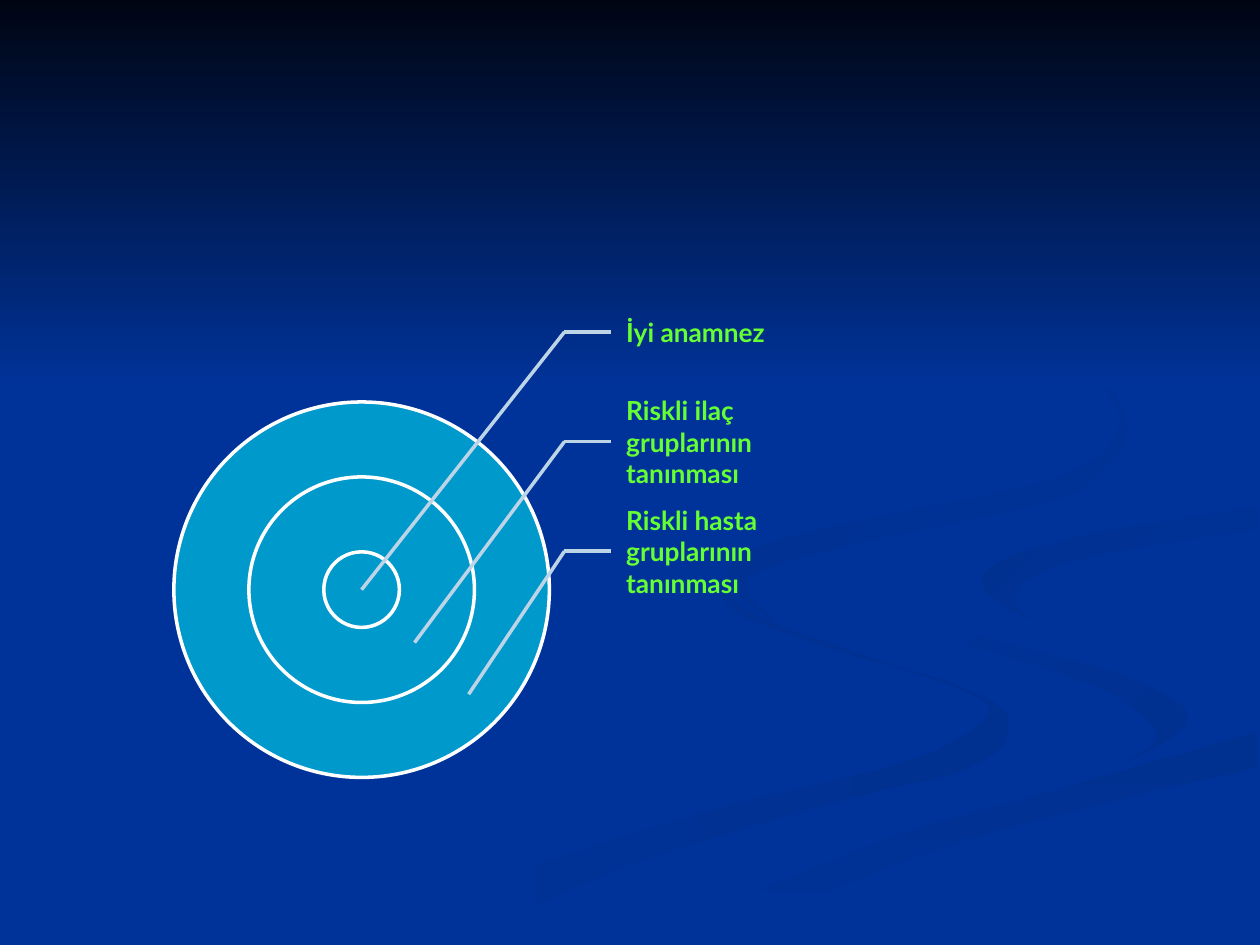
"""Build a slide with a three-ring target and its labels over a ribbon backdrop."""
from dataclasses import dataclass

from lxml import etree
from pptx import Presentation
from pptx.dml.color import RGBColor
from pptx.enum.shapes import MSO_CONNECTOR as Connector, MSO_SHAPE as Shape
from pptx.enum.text import MSO_ANCHOR as Anchor
from pptx.oxml.ns import qn
from pptx.util import Inches, Pt


@dataclass(frozen=True)
class Theme:
    background: RGBColor = RGBColor(0x00, 0x33, 0x99)
    shade: RGBColor = RGBColor(0x00, 0x30, 0x90)
    night: RGBColor = RGBColor(0x00, 0x05, 0x14)
    ring: RGBColor = RGBColor(0x00, 0x99, 0xCC)
    outline: RGBColor = RGBColor(0xFF, 0xFF, 0xFF)
    leader: RGBColor = RGBColor(0xBD, 0xD4, 0xE7)
    label: RGBColor = RGBColor(0x66, 0xFF, 0x33)
    font: str = "Lato"
    label_size: Pt = Pt(15)
    line_width: Pt = Pt(2)


def paint_gradient(shape, first, last, clockwise):
    shape.shadow.inherit = False
    shape.line.fill.background()
    shape.fill.gradient()
    shape.fill.gradient_angle = (360 - clockwise) % 360
    for stop, color, position in zip(shape.fill.gradient_stops, (first, last), (0, 1)):
        stop.color.rgb = color
        stop.position = position


def smooth_edge(points, steps=6):
    padded = [points[0], *points, points[-1]]
    curve = [points[0]]
    for a, b, c, d in zip(padded, padded[1:], padded[2:], padded[3:]):
        for step in range(1, steps + 1):
            t = step / steps
            curve.append(tuple(
                q + t * (r - p) / 2 + t**2 * (p - 2.5 * q + 2 * r - s / 2)
                + t**3 * (1.5 * (q - r) + (s - p) / 2)
                for p, q, r, s in zip(a, b, c, d)
            ))
    return curve


theme = Theme()
presentation = Presentation()
presentation.slide_width = Inches(10)
presentation.slide_height = Inches(7.5)
slide = presentation.slides.add_slide(presentation.slide_layouts[6])
slide.background.fill.solid()
slide.background.fill.fore_color.rgb = theme.background
shapes = slide.shapes

RIBBONS = [
    (theme.background, theme.shade, 0,
     [(575, 459), (581, 484), (654, 513), (752, 543), (785, 566), (727, 602),
      (579, 639), (417, 690), (300, 749)],
     [(575, 459), (594, 485), (682, 519), (781, 553), (800, 581), (769, 609),
      (651, 640), (499, 687), (361, 749)]),
    (theme.background, theme.shade, 45,
     [(724, 464), (755, 505), (868, 544), (918, 581), (894, 605)],
     [(724, 464), (758, 498), (888, 535), (943, 570), (894, 605)]),
    (theme.shade, theme.background, 90,
     [(503, 749), (696, 669), (831, 629), (998, 581)],
     [(571, 749), (695, 692), (821, 651), (998, 609)]),
    (theme.shade, theme.background, 45,
     [(998, 402), (865, 424), (791, 447), (782, 469), (826, 496)],
     [(998, 420), (878, 439), (816, 459), (806, 480), (826, 496)]),
    (theme.shade, theme.background, 45,
     [(762, 233), (846, 279), (889, 335), (842, 378), (704, 409), (605, 433),
      (577, 462), (622, 500)],
     [(762, 233), (864, 291), (894, 344), (855, 391), (683, 430), (606, 452),
      (593, 470), (622, 500)]),
]
for first, last, clockwise, near_edge, far_edge in RIBBONS:
    outline = smooth_edge(near_edge) + smooth_edge(far_edge)[::-1]
    builder = shapes.build_freeform(*outline[0], scale=Inches(0.01))
    builder.add_line_segments(outline[1:], close=True)
    paint_gradient(builder.convert_to_shape(), first, last, clockwise)

sky = shapes.add_shape(Shape.RECTANGLE, 0, 0, Inches(10), Inches(3.08))
paint_gradient(sky, theme.night, theme.background, 90)

CENTER_X, CENTER_Y = 2.87, 4.68
for diameter in (2.98, 1.79, 0.6):
    ring = shapes.add_shape(
        Shape.OVAL, Inches(CENTER_X - diameter / 2), Inches(CENTER_Y - diameter / 2),
        Inches(diameter), Inches(diameter),
    )
    ring.shadow.inherit = False
    ring.fill.solid()
    ring.fill.fore_color.rgb = theme.ring
    ring.line.color.rgb = theme.outline
    ring.line.width = theme.line_width

LABEL_LEFT, LABEL_TOP, LABEL_WIDTH, LABEL_HEIGHT = 4.85, 2.2, 1.49, 0.87
ELBOW_X = 4.48
CALLOUTS = [
    ("İyi anamnez", CENTER_X, CENTER_Y),
    ("Riskli ilaç gruplarının tanınması", 3.29, 5.1),
    ("Riskli hasta gruplarının tanınması", 3.72, 5.51),
]
for index, (text, target_x, target_y) in enumerate(CALLOUTS):
    top = LABEL_TOP + index * LABEL_HEIGHT
    label = shapes.add_textbox(
        Inches(LABEL_LEFT), Inches(top), Inches(LABEL_WIDTH), Inches(LABEL_HEIGHT)
    )
    frame = label.text_frame
    frame.word_wrap = True
    frame.vertical_anchor = Anchor.MIDDLE
    frame.margin_left = Inches(0.12)
    frame.margin_top = frame.margin_right = frame.margin_bottom = Inches(0.02)
    paragraph = frame.paragraphs[0]
    paragraph.text = text
    paragraph.font.name = theme.font
    paragraph.font.size = theme.label_size
    paragraph.font.bold = True
    paragraph.font.color.rgb = theme.label

    elbow_y = top + LABEL_HEIGHT / 2
    arm, pointer = (
        shapes.add_connector(
            Connector.STRAIGHT, Inches(ELBOW_X), Inches(elbow_y), Inches(x), Inches(y)
        )
        for x, y in ((LABEL_LEFT, elbow_y), (target_x, target_y))
    )
    arm.end_connect(label, 1)
    for leader in (arm, pointer):
        leader.line.color.rgb = theme.leader
        leader.line.width = theme.line_width
        etree.SubElement(leader._element.spPr, qn("a:effectLst"))

presentation.save("out.pptx")
